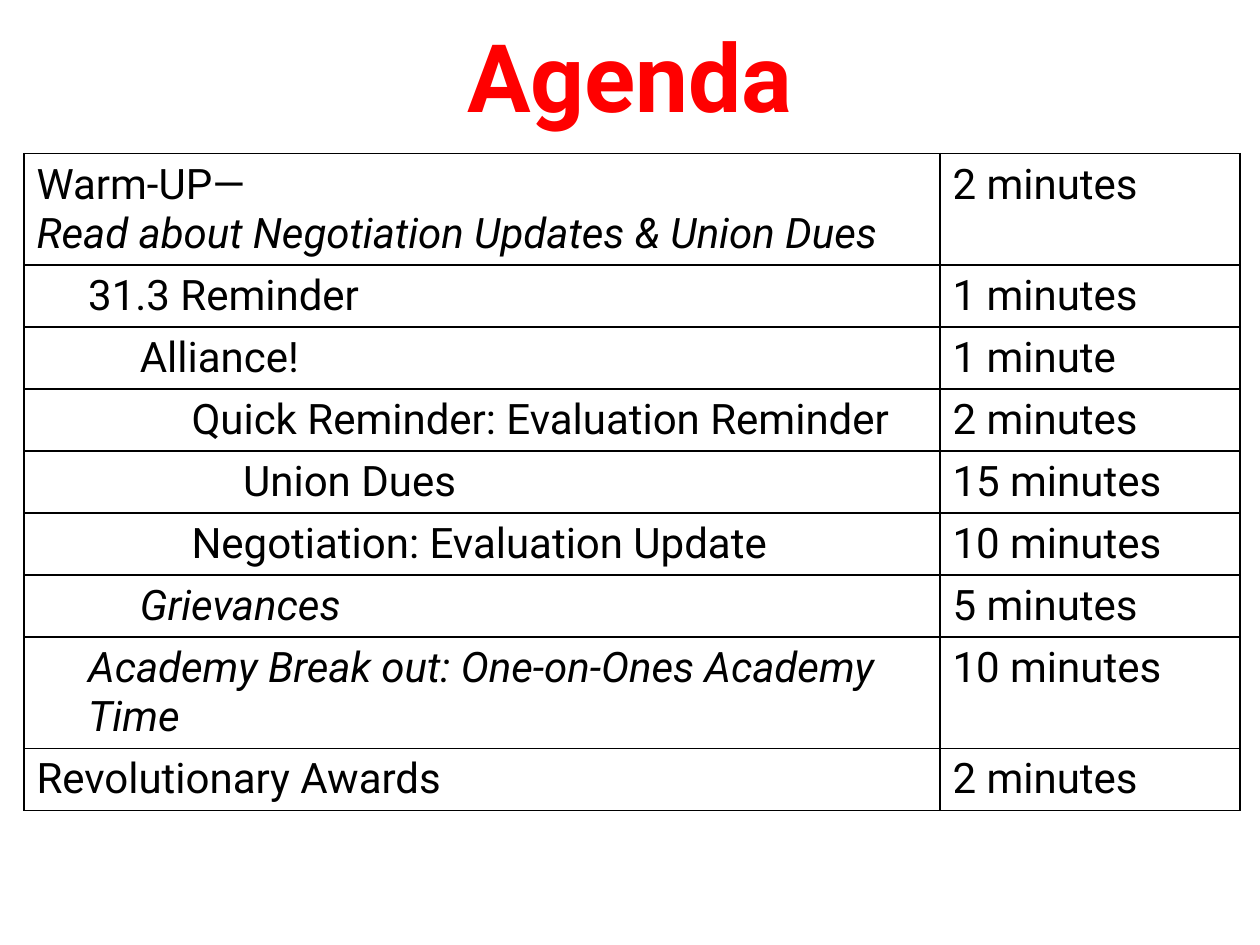
import pptx
import pptx.dml.color
import pptx.enum.text
import pptx.oxml
import pptx.oxml.ns
import pptx.util
from pptx.util import Inches

# Content: (indent level, lines as (text, italic), duration)
TITLE = "Agenda"
AGENDA = [
    (0, [("Warm-UP—", False),
         ("Read about Negotiation Updates & Union Dues", True)], "2 minutes"),
    (1, [("31.3 Reminder", False)], "1 minutes"),
    (2, [("Alliance!", False)], "1 minute"),
    (3, [("Quick Reminder: Evaluation Reminder", False)], "2 minutes"),
    (4, [("Union Dues", False)], "15 minutes"),
    (3, [("Negotiation: Evaluation Update", False)], "10 minutes"),
    (2, [("Grievances", True)], "5 minutes"),
    (1, [("Academy Break out: One-on-Ones Academy", True),
         ("Time", True)], "10 minutes"),
    (0, [("Revolutionary Awards", False)], "2 minutes"),
]

# Layout
FONT = "Roboto"
BLACK, WHITE, RED = "000000", "FFFFFF", "FF0000"
COLUMN_WIDTHS = (7.27, 2.38)
LINE_HEIGHT, CELL_PADDING, INDENT = 0.39, 0.1, 0.41


def color(value):
    return pptx.dml.color.RGBColor.from_string(value)


def format_font(font, size, value, bold=False, italic=False):
    font.name = FONT
    font.size = pptx.util.Pt(size)
    font.bold = bold
    font.italic = italic
    font.color.rgb = color(value)


def add_borders(cell):
    properties = cell._tc.get_or_add_tcPr()
    for index, side in enumerate(("lnL", "lnR", "lnT", "lnB")):
        border = pptx.oxml.parse_xml(
            f'<a:{side} {pptx.oxml.ns.nsdecls("a")} w="12700"><a:solidFill>'
            f'<a:srgbClr val="{BLACK}"/></a:solidFill></a:{side}>')
        properties.insert(index, border)


def fill_cell(cell, lines, level=0):
    cell.fill.solid()
    cell.fill.fore_color.rgb = color(WHITE)
    add_borders(cell)
    cell.margin_left = Inches(CELL_PADDING + INDENT * level)
    cell.text = "\n".join(text for text, _ in lines)
    for paragraph, (_, italic) in zip(cell.text_frame.paragraphs, lines):
        format_font(paragraph.font, 24, BLACK, italic=italic)


presentation = pptx.Presentation()
presentation.slide_width, presentation.slide_height = Inches(10), Inches(7.5)
slide = presentation.slides.add_slide(presentation.slide_layouts[5])

# Title
title = slide.shapes.title
title.left, title.top = Inches(0.5), Inches(-0.03)
title.width, title.height = Inches(9), Inches(1.25)
title.text_frame.text = TITLE
title.text_frame.vertical_anchor = pptx.enum.text.MSO_ANCHOR.MIDDLE
heading = title.text_frame.paragraphs[0]
heading.alignment = pptx.enum.text.PP_ALIGN.CENTER
format_font(heading.font, 54, RED, bold=True)

# Agenda table
row_heights = [LINE_HEIGHT * len(lines) + CELL_PADDING for _, lines, _ in AGENDA]
table = slide.shapes.add_table(
    len(AGENDA), len(COLUMN_WIDTHS), Inches(0.19), Inches(1.22),
    Inches(sum(COLUMN_WIDTHS)), Inches(sum(row_heights))).table
table.first_row = table.horz_banding = False
for column, width in zip(table.columns, COLUMN_WIDTHS):
    column.width = Inches(width)
for row, height, (level, lines, duration) in zip(table.rows, row_heights, AGENDA):
    row.height = Inches(height)
    fill_cell(row.cells[0], lines, level)
    fill_cell(row.cells[1], [(duration, False)])

presentation.save("out.pptx")
